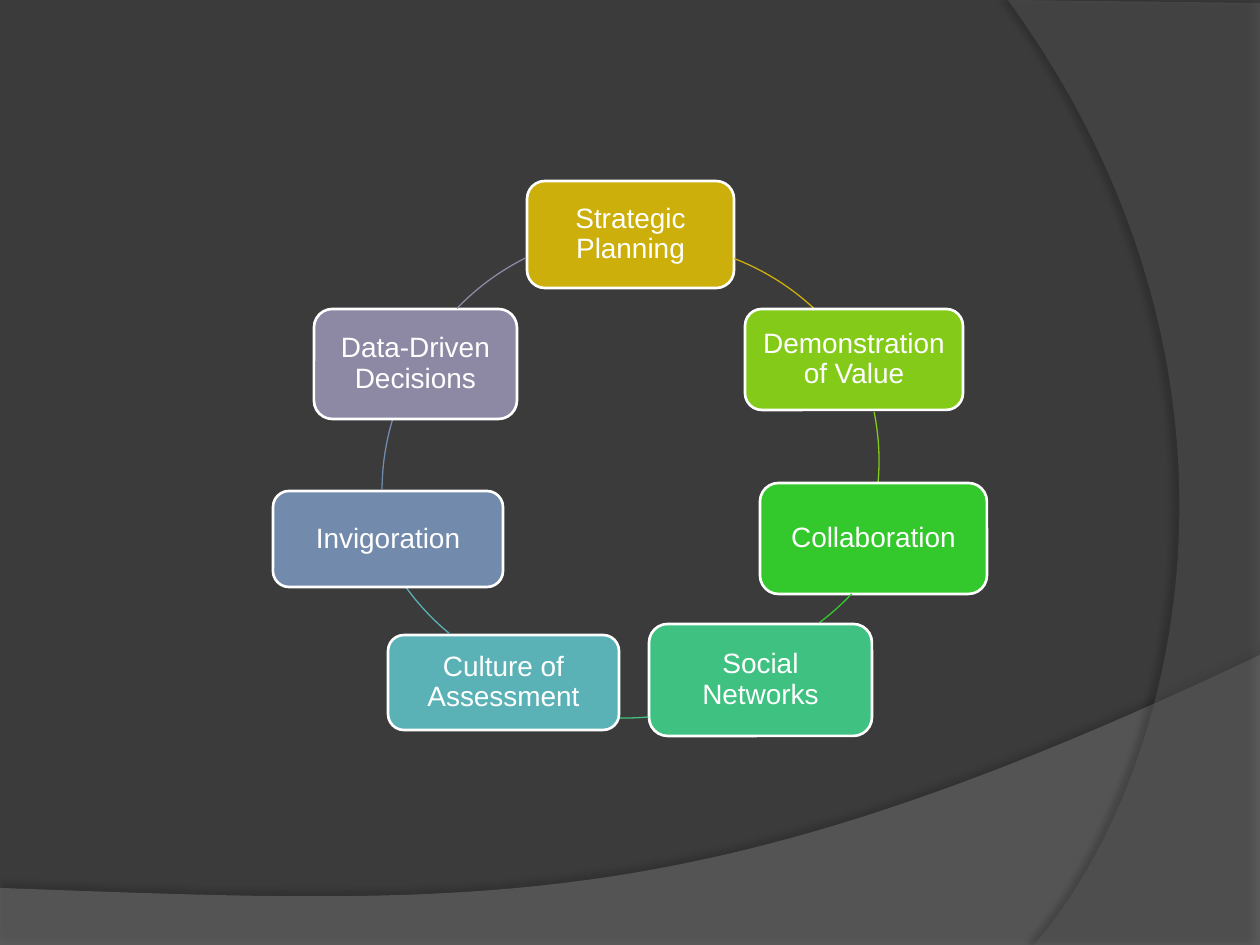
from collections import namedtuple
from lxml.etree import SubElement
from pptx import Presentation
from pptx.dml.color import RGBColor
from pptx.enum.shapes import MSO_SHAPE as Preset
from pptx.enum.text import MSO_ANCHOR as Anchor, PP_ALIGN as Align
from pptx.oxml.ns import qn
from pptx.util import Emu, Pt

PX = 914400 / 126
WIDTH, HEIGHT = 1260, 945
RING = 496
INSET = 9  # the rounded corners add about 5 more
CURVE_STEPS = 48
FINE = 100  # freeform units per px, which keeps curves smooth

Box = namedtuple("Box", "left top width height")

CHARCOAL = RGBColor(0x3B, 0x3B, 0x3B)
GREY = RGBColor(0x7F, 0x7F, 0x7F)
DARK_GREY = RGBColor(0x5E, 0x5E, 0x5E)
WHITE = RGBColor(0xFF, 0xFF, 0xFF)
GOLD = RGBColor(0xCC, 0xAF, 0x0A)
LIME = RGBColor(0x84, 0xCB, 0x19)
GREEN = RGBColor(0x33, 0xC8, 0x2B)
JADE = RGBColor(0x3F, 0xC2, 0x81)
TEAL = RGBColor(0x5A, 0xB2, 0xB6)
BLUE = RGBColor(0x72, 0x8A, 0xAC)
MAUVE = RGBColor(0x8D, 0x89, 0xA4)

# label, colour, box within the cycle, corner of the link's ring, link angles
STEPS = [
    ("Strategic Planning", GOLD, Box(254, 0, 207, 107), (124, 61), (291.1, 313.4)),
    ("Demonstration of Value", LIME, Box(472, 128, 218, 101), (110, 32), (348.6, 4.9)),
    ("Collaboration", GREEN, Box(487, 302, 227, 111), (150, -5), (43.2, 53.2)),
    ("Social Networks", JADE, Box(376, 443, 223, 112), (105, 41), (84.8, 91.7)),
    ("Culture of Assessment", TEAL, Box(115, 454, 231, 95), (86, 13), (129.5, 144.5)),
    ("Invigoration", BLUE, Box(0, 310, 230, 96), (109, 62), (180.3, 196.9)),
    ("Data-Driven Decisions", MAUVE, Box(41, 128, 203, 110), (115, 51), (223.8, 243.7)),
]


def px(length):
    return Emu(round(length * PX))


def add_preset(page, preset, box):
    shape = page.shapes.add_shape(preset, *map(px, box))
    shape.shadow.inherit = False
    return shape


def write(shape, text, *, size=16, font="Arial", color=WHITE, spacing=0.9):
    frame = shape.text_frame
    frame.word_wrap = True
    frame.vertical_anchor = Anchor.MIDDLE
    frame.margin_left = frame.margin_right = px(INSET)
    frame.margin_top = frame.margin_bottom = px(INSET)
    para = frame.paragraphs[0]
    para.alignment = Align.CENTER
    para.line_spacing = spacing
    span = para.add_run()
    span.text = text
    span.font.size = Pt(size)
    span.font.name = font
    span.font.color.rgb = color


def curve(start, first, second, end):
    """Points along a cubic curve, without its start."""
    points = []
    for step in range(1, CURVE_STEPS + 1):
        t = step / CURVE_STEPS
        weights = ((1 - t) ** 3, 3 * t * (1 - t) ** 2, 3 * t * t * (1 - t), t ** 3)
        points.append(tuple(
            sum(w * value for w, value in zip(weights, axis))
            for axis in zip(start, first, second, end)))
    return points


def add_sweep(page, box, points, *, color, opacity, shade, distance, direction):
    """A translucent background area with a soft shadow along its curve."""
    outline = [(round(x * FINE), round(y * FINE)) for x, y in points]
    builder = page.shapes.build_freeform(*outline[0], scale=PX / FINE)
    builder.add_line_segments(outline[1:], close=True)
    area = builder.convert_to_shape(px(box.left), px(box.top))
    area.fill.solid()
    area.fill.fore_color.rgb = color
    area.line.fill.background()
    area.shadow.inherit = False
    properties = area._element.spPr
    tint = properties.find(qn("a:solidFill")).find(qn("a:srgbClr"))
    SubElement(tint, qn("a:alpha"), val=str(opacity * 1000))
    shadow = SubElement(
        properties.find(qn("a:effectLst")), qn("a:outerShdw"),
        blurRad=str(Pt(4)), dist=str(Pt(distance)), dir=str(direction * 60000),
        algn="ctr", rotWithShape="0")
    black = SubElement(shadow, qn("a:srgbClr"), val="000000")
    SubElement(black, qn("a:alpha"), val=str(shade * 1000))


def draw_background(page, box):
    page.background.fill.solid()
    page.background.fill.fore_color.rgb = CHARCOAL

    wave = Box(box.left, box.top + 655, box.width, 291)
    crest = (wave.width, 0)
    add_sweep(page, wave,
              [(0, 233), (0, wave.height), (wave.width, wave.height), crest,
               *curve(crest, (704, 264), (493, 251), (0, 233))],
              color=GREY, opacity=45, shade=35, distance=3.5, direction=270)

    side = Box(box.left + 1008, box.top, 252, box.height)
    foot = (26, side.height)
    add_sweep(page, side,
              [(side.width, 3), (side.width, side.height), foot,
               *curve(foot, (170, 780), (275, 378), (0, 0))],
              color=DARK_GREY, opacity=40, shade=45, distance=4, direction=180)


def add_node(page, box, label, color):
    node = add_preset(page, Preset.ROUNDED_RECTANGLE, box)
    node.fill.solid()
    node.fill.fore_color.rgb = color
    node.line.color.rgb = WHITE
    node.line.width = Pt(1.5)
    write(node, label)


def add_link(page, box, angles, color):
    """An arc of the ring that fills the box, clockwise between two degrees."""
    link = add_preset(page, Preset.ARC, box)
    for index, degrees in enumerate(angles):
        link.adjustments[index] = degrees * 60000 / 100000
    link.fill.background()
    link.line.color.rgb = color
    link.line.width = Pt(0.75)


def draw_cycle(page, box):
    for label, color, node, (left, top), angles in STEPS:
        add_node(page, Box(box.left + node.left, box.top + node.top,
                           node.width, node.height), label, color)
        add_link(page, Box(box.left + left, box.top + top, RING, RING), angles, color)


def main():
    deck = Presentation()
    deck.slide_width, deck.slide_height = px(WIDTH), px(HEIGHT)
    page = deck.slides.add_slide(deck.slide_layouts[6])
    draw_background(page, Box(0, 0, WIDTH, HEIGHT))
    draw_cycle(page, Box(273, 181, 714, 556))
    deck.save("out.pptx")


if __name__ == "__main__":
    main()
